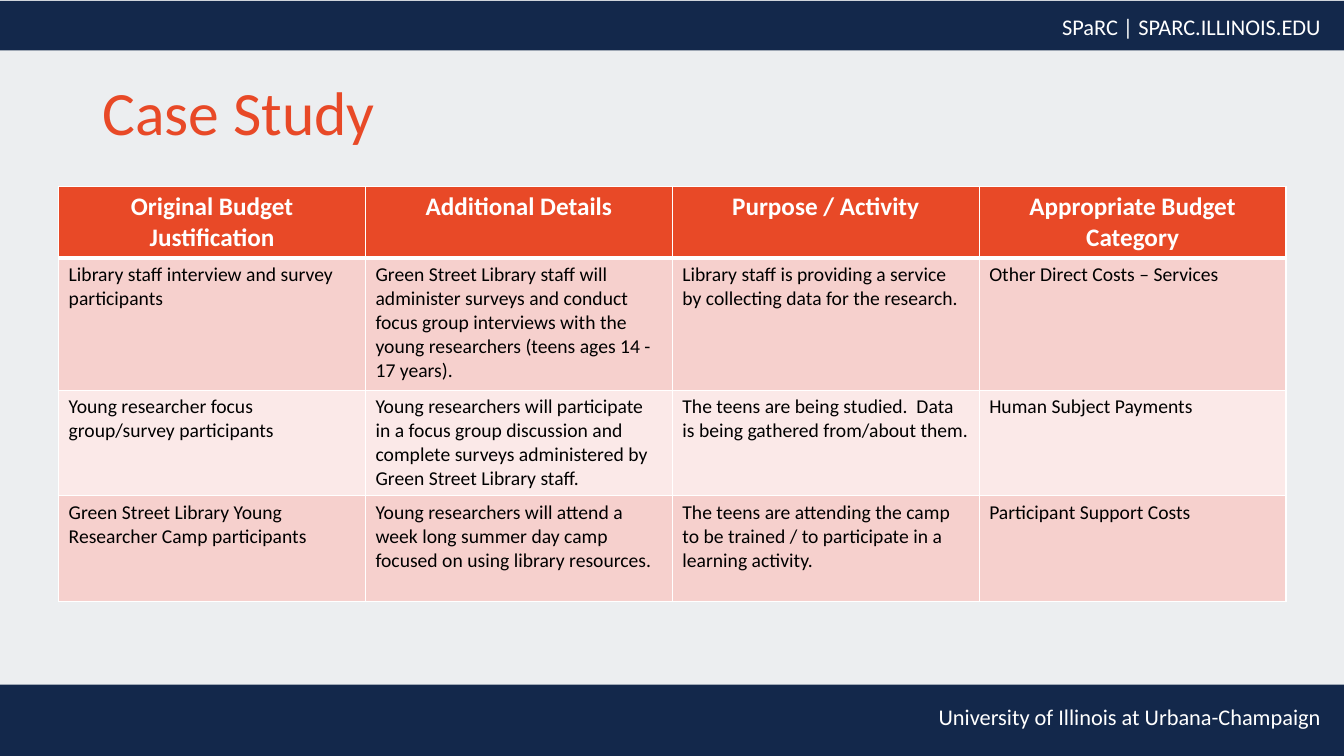
from pptx import Presentation
from pptx.dml.color import RGBColor as Color
from pptx.enum.shapes import MSO_SHAPE as Shape
from pptx.enum.text import MSO_ANCHOR as Anchor, PP_ALIGN as Align
from pptx.oxml import parse_xml
from pptx.oxml.ns import nsdecls
from pptx.util import Pt

# Content
TITLE = "Case Study"
HEADER = "SPaRC | SPARC.ILLINOIS.EDU"
FOOTER = "University of Illinois at Urbana-Champaign"
ROWS = [
    ("Original Budget Justification", "Additional Details",
     "Purpose / Activity", "Appropriate Budget Category"),
    ("Library staff interview and survey participants",
     "Green Street Library staff will administer surveys and conduct focus "
     "group interviews with the young researchers (teens ages 14 - 17 years).",
     "Library staff is providing a service by collecting data for the research.",
     "Other Direct Costs – Services"),
    ("Young researcher focus group/survey participants",
     "Young researchers will participate in a focus group discussion and "
     "complete surveys administered by Green Street Library staff.",
     "The teens are being studied.  Data is being gathered from/about them.",
     "Human Subject Payments"),
    ("Green Street Library Young Researcher Camp participants",
     "Young researchers will attend a week long summer day camp focused on "
     "using library resources.",
     "The teens are attending the camp to be trained / to participate in a "
     "learning activity.",
     "Participant Support Costs"),
]

THEME = {
    "font": "Calibri",
    "page": "ECEEF0", "navy": "13284B", "orange": "E84927",
    "white": "FFFFFF", "black": "000000", "bands": ("F6D0CD", "FBE9E8"),
    "title": 44, "strip": 16, "head": 18, "body": 14,
}

# Layout in points
WIDTH, HEIGHT = 960, 540
STRIPS = [  # text, strip top, strip height, text top
    (FOOTER, 489, 51, 499),
    (HEADER, 0.7, 35.3, 5.5),
]
STRIP_TEXT_LEFT, STRIP_TEXT_WIDTH = 407, 543.5
TABLE_LEFT, TABLE_TOP, COLUMN_WIDTH = 41.9, 133.4, 219.2
ROW_HEIGHTS = (51, 94.3, 75.4, 75.4)


def color(name):
    return Color.from_string(THEME.get(name, name))


def style(para, size, ink, align=Align.LEFT, bold=False):
    para.alignment = align
    for span in para.runs:
        span.font.name = THEME["font"]
        span.font.size = Pt(THEME[size])
        span.font.bold = bold
        span.font.color.rgb = color(ink)


def add_text(page, text, bounds, size, ink, align=Align.LEFT):
    box = page.shapes.add_textbox(*map(Pt, bounds))
    box.text_frame.word_wrap = True
    box.text_frame.vertical_anchor = Anchor.TOP
    box.text_frame.text = text
    para = box.text_frame.paragraphs[0]
    style(para, size, ink, align)
    return para


def add_borders(cell, widths):
    properties = cell._tc.get_or_add_tcPr()
    for side, width in zip("LRTB", widths):
        properties.append(parse_xml(
            f'<a:ln{side} {nsdecls("a")} w="{Pt(width)}"><a:solidFill>'
            f'<a:srgbClr val="{THEME["white"]}"/></a:solidFill></a:ln{side}>'))


def add_budget_table(page):
    columns = len(ROWS[0])
    table = page.shapes.add_table(
        len(ROWS), columns, Pt(TABLE_LEFT), Pt(TABLE_TOP),
        Pt(COLUMN_WIDTH * columns), Pt(sum(ROW_HEIGHTS))).table
    for column in table.columns:
        column.width = Pt(COLUMN_WIDTH)
    for index, (texts, height) in enumerate(zip(ROWS, ROW_HEIGHTS)):
        table.rows[index].height = Pt(height)
        heading = index == 0
        fill = "orange" if heading else THEME["bands"][(index - 1) % 2]
        for cell, text in zip(table.rows[index].cells, texts):
            cell.text_frame.text = text
            para = cell.text_frame.paragraphs[0]
            if heading:
                style(para, "head", "white", Align.CENTER, True)
            else:
                style(para, "body", "black")
            add_borders(cell, (1, 1, 3 if index == 1 else 1, 3 if heading else 1))
            cell.fill.solid()
            cell.fill.fore_color.rgb = color(fill)


def main():
    deck = Presentation()
    deck.slide_width, deck.slide_height = Pt(WIDTH), Pt(HEIGHT)
    page = deck.slides.add_slide(deck.slide_layouts[6])
    page.background.fill.solid()
    page.background.fill.fore_color.rgb = color("page")

    # Navy strips with their text
    for text, top, height, text_top in STRIPS:
        strip = page.shapes.add_shape(
            Shape.RECTANGLE, Pt(0), Pt(top), Pt(WIDTH), Pt(height))
        strip.shadow.inherit = False
        strip.fill.solid()
        strip.fill.fore_color.rgb = color("navy")
        strip.line.fill.background()
        add_text(page, text, (STRIP_TEXT_LEFT, text_top, STRIP_TEXT_WIDTH, 26.6),
                 "strip", "white", Align.RIGHT)

    # Title and table
    title = add_text(page, TITLE, (66, 55, 828, 78), "title", "orange")
    title.line_spacing = 0.9
    add_budget_table(page)
    deck.save("out.pptx")


if __name__ == "__main__":
    main()
